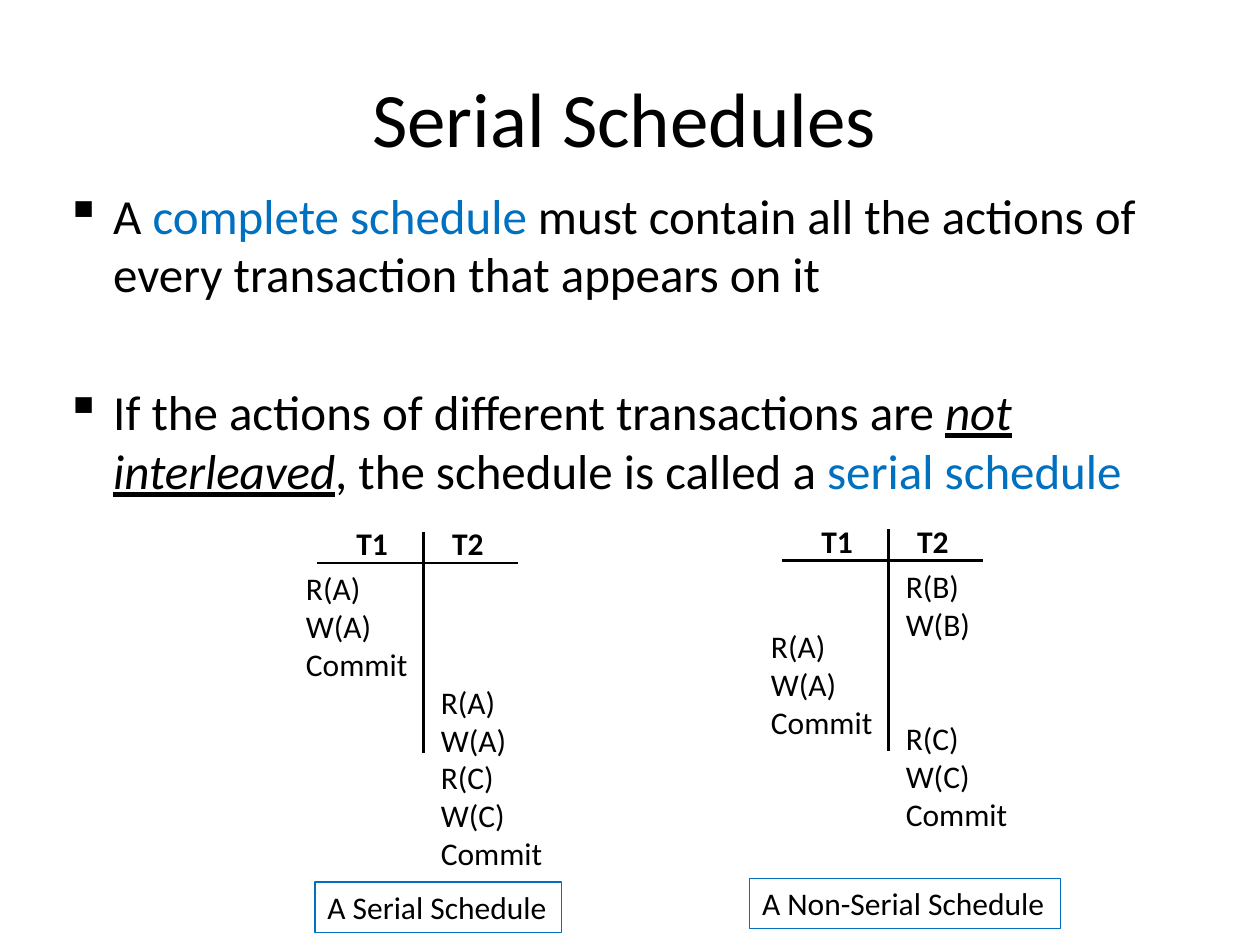
from lxml import etree
from pptx import Presentation
from pptx import util as u
from pptx.dml.color import RGBColor
from pptx.enum import shapes, text
from pptx.oxml import ns

BLACK = RGBColor(0x00, 0x00, 0x00)
BLUE = RGBColor(0x00, 0x70, 0xC0)
FONT = "Calibri"
ROW = 0.3
COLUMN_WIDTH = 1.02
LABEL_HEIGHT = 0.4
BULLET_INDENT = u.Inches(0.38)

POINTS = [
    (0, [("A ", ""), ("complete schedule ", "blue"),
         ("must contain all the actions of every transaction that appears on it", "")]),
    (45, [("If the actions of different transactions are ", ""), ("not", "stress"),
          (" ", ""), ("interleaved", "stress"),
          (", the schedule is called a ", ""), ("serial schedule", "blue")]),
]


def inches(*lengths):
    return [u.Inches(length) for length in lengths]


def format_span(span, size, color=BLACK, bold=False):
    span.font.name = FONT
    span.font.size = u.Pt(size)
    span.font.color.rgb = color
    span.font.bold = bold


def add_title(page, words):
    title = page.shapes.title
    title.left, title.top, title.width, title.height = inches(0.08, 0.3, 9.75, 1.25)
    frame = title.text_frame
    frame.text = words
    frame.vertical_anchor = text.MSO_ANCHOR.MIDDLE
    para = frame.paragraphs[0]
    para.alignment = text.PP_ALIGN.CENTER
    format_span(para.runs[0], 44)


def add_bullet(para):
    properties = para._p.get_or_add_pPr()
    properties.set("marL", str(BULLET_INDENT))
    properties.set("indent", str(-BULLET_INDENT))
    etree.SubElement(properties, ns.qn("a:buChar")).set("char", "▪")


def add_points(page, points):
    box = page.shapes.add_textbox(*inches(0.42, 1.42, 9.45, 2.7))
    frame = box.text_frame
    frame.word_wrap = True
    for number, (gap, pieces) in enumerate(points):
        para = frame.add_paragraph() if number else frame.paragraphs[0]
        para.space_before = u.Pt(gap)
        add_bullet(para)
        for words, style in pieces:
            span = para.add_run()
            span.text = words
            format_span(span, 28, BLUE if style == "blue" else BLACK)
            span.font.italic = span.font.underline = style == "stress"


def fill_box(box, lines, bold=False):
    frame = box.text_frame
    frame.word_wrap = False
    frame.text = "\n".join(lines)
    for para in frame.paragraphs:
        para.alignment = text.PP_ALIGN.LEFT
        format_span(para.runs[0], 18, bold=bold)
    return frame


def add_text(page, left, top, width, lines, bold=False):
    height = ROW * len(lines) + 0.1
    box = page.shapes.add_textbox(*inches(left, top, width, height))
    return fill_box(box, lines, bold)


def add_rule(page, *ends):
    rule = page.shapes.add_connector(shapes.MSO_CONNECTOR.STRAIGHT, *inches(*ends))
    rule.line.color.rgb = BLACK
    rule.line.width = u.Pt(1.5)
    etree.SubElement(rule._element.spPr, ns.qn("a:effectLst"))


def add_caption(page, left, top, width, words):
    box = page.shapes.add_shape(shapes.MSO_SHAPE.RECTANGLE,
                                *inches(left, top, width, LABEL_HEIGHT))
    box.shadow.inherit = False
    box.fill.background()
    box.line.color.rgb = BLUE
    box.line.width = u.Pt(0.75)
    fill_box(box, [words])


def add_schedule(page, x, y, first, first_row, second, second_row):
    add_rule(page, x, y - 0.25, x, y + 1.51)
    add_rule(page, x - 0.84, y, x + 0.75, y)
    add_text(page, x - 0.63, y - 0.36, 0.45, ["T1"], bold=True)
    add_text(page, x + 0.13, y - 0.36, 0.45, ["T2"], bold=True)
    add_text(page, x - 1.03, y + first_row * ROW, COLUMN_WIDTH, first)
    return add_text(page, x + 0.04, y + second_row * ROW, COLUMN_WIDTH, second)


def main():
    deck = Presentation()
    deck.slide_width, deck.slide_height = inches(10, 7.5)
    page = deck.slides.add_slide(deck.slide_layouts[5])
    add_title(page, "Serial Schedules")
    add_points(page, POINTS)
    commit_a = ["R(A)", "W(A)", "Commit"]
    commit_c = ["R(C)", "W(C)", "Commit"]
    add_schedule(page, 3.36, 4.47, commit_a, 0, commit_a[:2] + commit_c, 3)
    mixed = add_schedule(page, 7.05, 4.45, commit_a, 1.6, ["R(B)", "W(B)"] + commit_c, 0)
    mixed.paragraphs[2].space_before = u.Pt(44)
    add_caption(page, 2.5, 7, 1.96, "A Serial Schedule")
    add_caption(page, 5.95, 6.97, 2.47, "A Non-Serial Schedule")
    deck.save("out.pptx")


if __name__ == "__main__":
    main()
